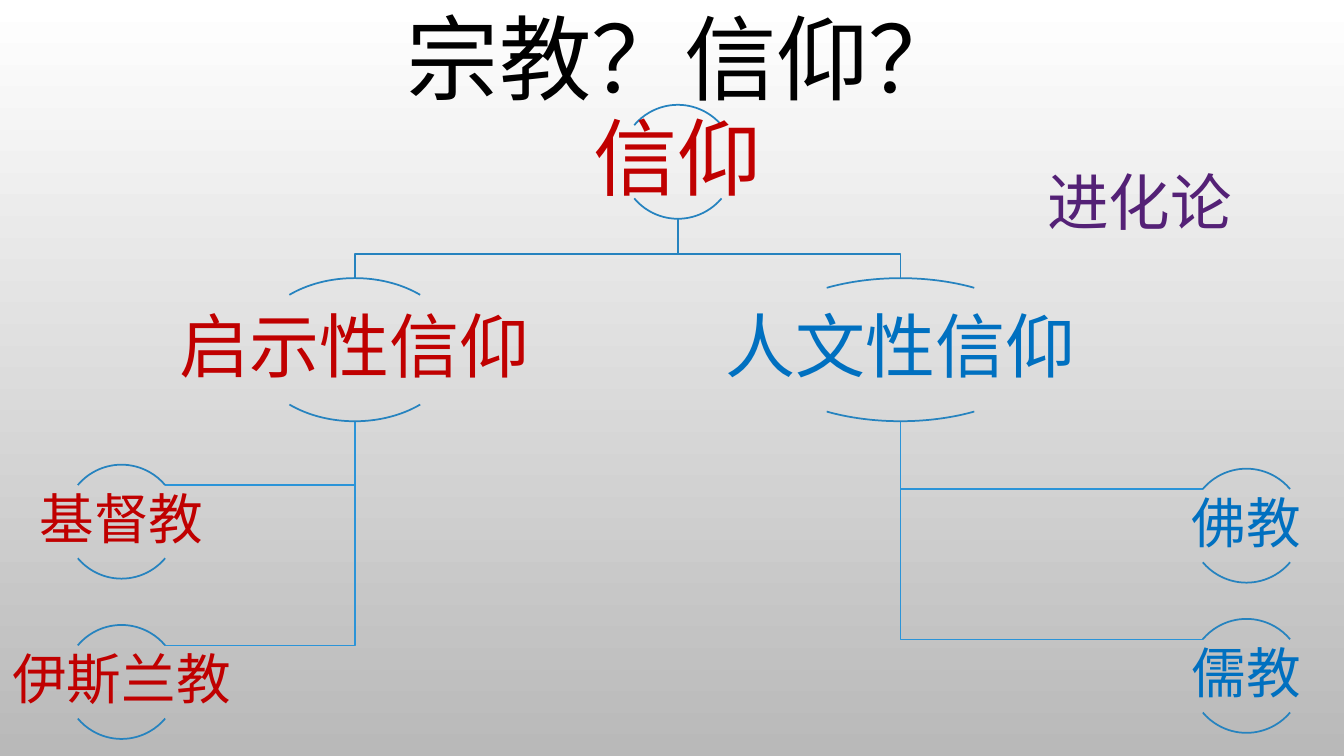
from dataclasses import dataclass

from pptx import Presentation
from pptx.dml.color import RGBColor
from pptx.enum.shapes import MSO_SHAPE
from pptx.enum.text import MSO_ANCHOR, PP_ALIGN
from pptx.util import Inches, Pt

ARC = MSO_SHAPE.ARC
CENTER, LEFT = PP_ALIGN.CENTER, PP_ALIGN.LEFT
MIDDLE, TOP = MSO_ANCHOR.MIDDLE, MSO_ANCHOR.TOP

COLORS = {
    "title": "000000",
    "revealed": "C00000",
    "humanist": "0070C0",
    "theory": "542176",
    "outline": "2683BF",
    "branch": "2B94D8",
    "background_top": "FFFFFF",
    "background_bottom": "B9B9B9",
}
FONT = "Roboto"
LINE_WIDTH = 1.25
TITLE_ONLY_LAYOUT = 5

# Arc start and end angles, as adjustment values (220-320 and 40-140 degrees)
ARC_ANGLES = ((132, 192), (24, 84))
ARC_END_X = 0.38  # horizontal reach of an arc's end, as a share of node width
LABEL_TOP = 0.18  # top of a label, as a share of node height


@dataclass
class Node:
    """A belief between two arcs; lengths are percentages of the slide."""
    text: str
    center: float
    top: float
    width: float
    height: float
    size: int
    color: str

    @property
    def bottom(self):
        return self.top + self.height

    @property
    def label_top(self):
        return self.top + LABEL_TOP * self.height


class BeliefSlide:
    """Holds the slide and its style; positions are percentages of its size."""

    def __init__(self, presentation):
        self.width = presentation.slide_width
        self.height = presentation.slide_height
        layout = presentation.slide_layouts[TITLE_ONLY_LAYOUT]
        self.slide = presentation.slides.add_slide(layout)

    def x(self, percent):
        return round(self.width * percent / 100)

    def y(self, percent):
        return round(self.height * percent / 100)

    def box(self, left, top, width, height):
        return self.x(left), self.y(top), self.x(width), self.y(height)

    def background(self):
        fill = self.slide.background.fill
        fill.gradient()
        fill.gradient_angle = 270
        names = ("background_top", "background_bottom")
        for stop, name in zip(fill.gradient_stops, names):
            stop.color.rgb = RGBColor.from_string(COLORS[name])

    def set_text(self, shape, text, size, color, align=CENTER, anchor=MIDDLE, spacing=0.9):
        frame = shape.text_frame
        frame.word_wrap = True
        frame.vertical_anchor = anchor
        paragraph = frame.paragraphs[0]
        paragraph.text = text
        paragraph.alignment = align
        paragraph.line_spacing = spacing
        paragraph.font.name = FONT
        paragraph.font.size = Pt(size)
        paragraph.font.color.rgb = RGBColor.from_string(COLORS[color])

    def outline(self, shape, color):
        shape.shadow.inherit = False
        shape.fill.background()
        shape.line.width = Pt(LINE_WIDTH)
        shape.line.color.rgb = RGBColor.from_string(COLORS[color])

    def title(self, text, size, *bounds):
        shape = self.slide.shapes.title
        shape.left, shape.top, shape.width, shape.height = self.box(*bounds)
        self.set_text(shape, text, size, "title")

    def note(self, text, size, color, *bounds):
        shape = self.slide.shapes.add_textbox(*self.box(*bounds))
        self.set_text(shape, text, size, color, LEFT, TOP, 1.0)

    def connector_line(self, points, color):
        start, *rest = [(self.x(x), self.y(y)) for x, y in points]
        builder = self.slide.shapes.build_freeform(*start)
        builder.add_line_segments(rest, close=False)
        self.outline(builder.convert_to_shape(), color)

    def fork(self, parent, child, elbow):
        """Joins the root to a branch with a step at the elbow row."""
        points = [(parent.center, parent.bottom), (parent.center, elbow),
                  (child.center, elbow), (child.center, child.top)]
        self.connector_line(points, "outline")

    def hang(self, parent, child):
        """Joins a branch to the near end of a leaf's upper arc."""
        side = 1 if parent.center > child.center else -1
        end = child.center + side * ARC_END_X * child.width
        points = [(parent.center, parent.bottom),
                  (parent.center, child.label_top), (end, child.label_top)]
        self.connector_line(points, "branch")

    def node(self, node):
        bounds = self.box(node.center - node.width / 2, node.top, node.width, node.height)
        for angles in ARC_ANGLES:
            arc = self.slide.shapes.add_shape(ARC, *bounds)
            arc.adjustments[0], arc.adjustments[1] = angles
            self.outline(arc, "outline")
        label = self.slide.shapes.add_textbox(*self.box(
            node.center - node.width, node.label_top,
            2 * node.width, (1 - 2 * LABEL_TOP) * node.height))
        frame = label.text_frame
        frame.margin_left = frame.margin_right = Inches(0.03)
        frame.margin_top = frame.margin_bottom = Inches(0.03)
        self.set_text(label, node.text, node.size, node.color)


def leaf(text, center, top, color):
    return Node(text, center, top, 8.48, 15.07, 39, color)


def main():
    presentation = Presentation()
    presentation.slide_width = Inches(13.33)
    presentation.slide_height = Inches(7.5)
    page = BeliefSlide(presentation)
    page.background()
    page.title("宗教？信仰？", 66, 8.4, -1.33, 85, 19.6)

    # Tree of beliefs: a root, two branches and their leaves
    root = Node("信仰", 50.44, 13.87, 8.48, 15.07, 60, "revealed")
    revealed = Node("启示性信仰", 26.4, 36.8, 15.15, 18.93, 50, "revealed")
    humanist = Node("人文性信仰", 67, 36.8, 21.9, 18.93, 50, "humanist")
    tree = (
        (revealed, (leaf("基督教", 9.04, 61.47, "revealed"),
                    leaf("伊斯兰教", 9.04, 82.67, "revealed"))),
        (humanist, (leaf("佛教", 92.74, 62, "humanist"),
                    leaf("儒教", 92.74, 81.87, "humanist"))),
    )

    # Connectors lie behind the nodes
    for branch, leaves in tree:
        for child in leaves:
            page.hang(branch, child)
        page.fork(root, branch, 33.6)

    # Nodes
    page.node(root)
    for branch, leaves in tree:
        for node in (branch, *leaves):
            page.node(node)

    # Side note
    page.note("进化论", 44, "theory", 77.18, 21.07, 17.55, 11.2)
    presentation.save("out.pptx")


if __name__ == "__main__":
    main()
